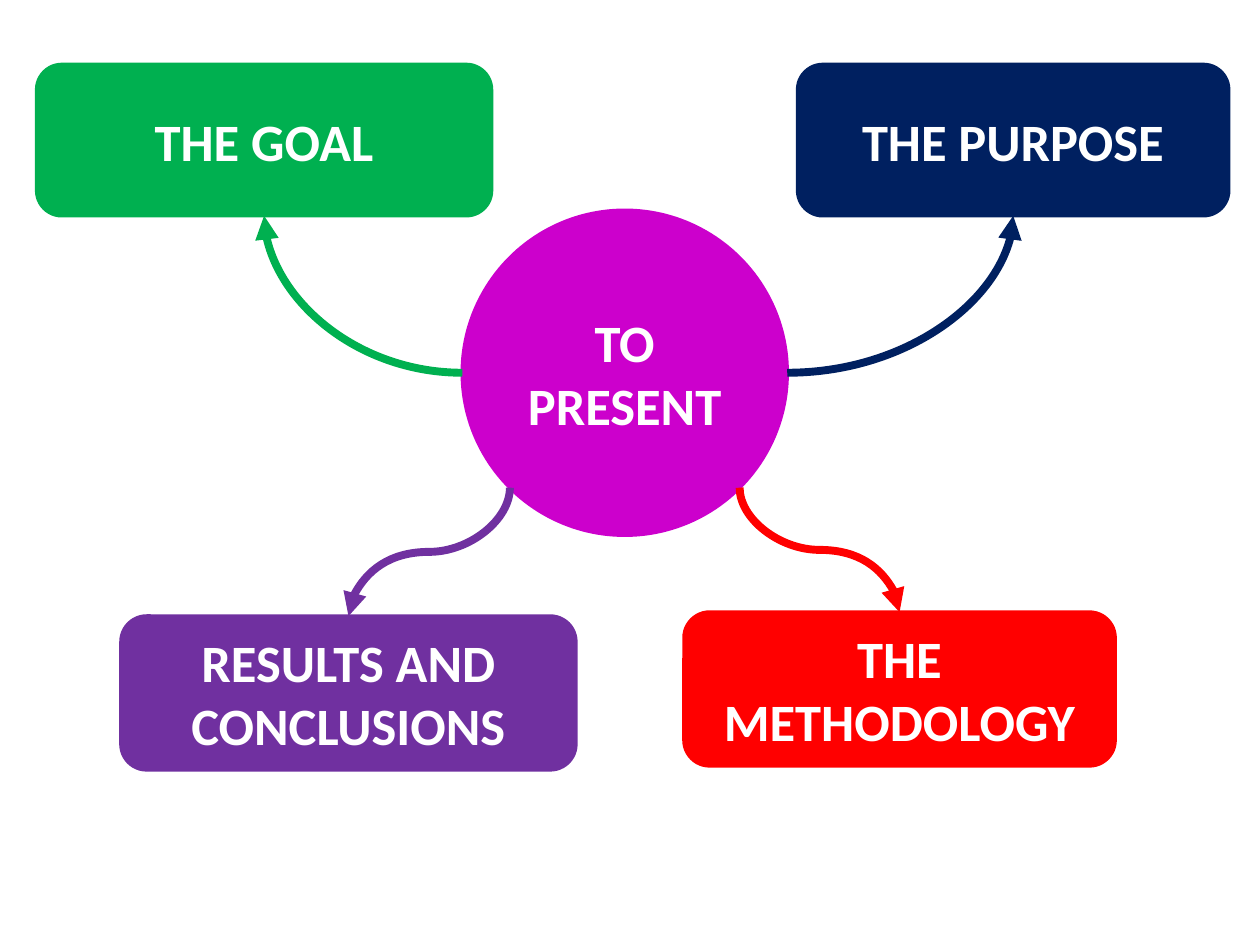
import math
from dataclasses import dataclass

from lxml import etree
from pptx import Presentation
from pptx import util as u
from pptx.dml.color import RGBColor
from pptx.enum import shapes, text
from pptx.oxml import ns


@dataclass(frozen=True)
class Node:
    """A labelled shape, measured in centimetres."""
    label: str
    left: float
    top: float
    width: float
    height: float
    color: str

    @property
    def center(self) -> tuple[float, float]:
        return self.left + self.width / 2, self.top + self.height / 2


HUB = Node("TO PRESENT", 9.32, 4.24, 6.55, 6.55, "CC00CC")
UPPER_TOPICS = [
    Node("THE GOAL", 0.74, 1.3, 9.17, 3.05, "00B050"),
    Node("THE PURPOSE", 16.08, 1.3, 8.69, 3.05, "002060"),
]
LOWER_TOPICS = [
    Node("RESULTS AND CONCLUSIONS", 2.44, 12.42, 9.17, 3.1, "7030A0"),
    Node("THE METHODOLOGY", 13.79, 12.34, 8.69, 3.1, "FF0000"),
]
LABEL_FONT = {"name": "Calibri", "size": u.Pt(30), "bold": True}


def rgb(color: str) -> RGBColor:
    return RGBColor.from_string(color)


def draw_node(page, node: Node, kind) -> None:
    box = page.shapes.add_shape(
        kind, *map(u.Cm, (node.left, node.top, node.width, node.height)))
    box.shadow.inherit = False
    box.fill.solid()
    box.fill.fore_color.rgb = rgb(node.color)
    box.line.color.rgb = rgb(node.color)
    box.line.width = u.Pt(2)
    frame = box.text_frame
    frame.word_wrap = True
    frame.vertical_anchor = text.MSO_ANCHOR.MIDDLE
    para = frame.paragraphs[0]
    para.alignment = text.PP_ALIGN.CENTER
    span = para.add_run()
    span.text = node.label
    for name, value in LABEL_FONT.items():
        setattr(span.font, name, value)
    span.font.color.rgb = rgb("FFFFFF")


def draw_curve(page, begin: tuple[float, float], end: tuple[float, float], color: str):
    """Draw a curved arrow that leaves its begin point horizontally."""
    curve = page.shapes.add_connector(
        shapes.MSO_CONNECTOR.CURVE, *map(u.Cm, (*begin, *end)))
    curve.line.color.rgb = rgb(color)
    curve.line.width = u.Pt(4.5)
    etree.SubElement(curve.line._get_or_add_ln(), ns.qn("a:tailEnd"), type="triangle")
    etree.SubElement(curve._element.spPr, ns.qn("a:effectLst"))
    return curve


def draw_upward_arrow(page, topic: Node, side: int) -> None:
    """Join a side of the hub to the bottom of a topic with a quarter bend."""
    x, y = HUB.center
    end = (topic.center[0], topic.top + topic.height)
    curve = draw_curve(page, (x + side * HUB.width / 2, y), end, topic.color)
    curve._element.spPr.find(ns.qn("a:prstGeom")).set("prst", "curvedConnector2")


def draw_downward_arrow(page, topic: Node, side: int) -> None:
    """Join a lower diagonal of the hub to the top of a topic with a turned S bend."""
    reach = HUB.width / 2 * math.sqrt(0.5)
    start_x, start_y = HUB.center[0] + side * reach, HUB.center[1] + reach
    end_x, end_y = topic.center[0], topic.top
    mid_x, mid_y = (start_x + end_x) / 2, (start_y + end_y) / 2
    half_drop = side * (end_y - start_y) / 2
    half_run = abs(end_x - start_x) / 2
    curve = draw_curve(page, (mid_x + half_drop, mid_y - half_run),
                       (mid_x - half_drop, mid_y + half_run), topic.color)
    curve._element.spPr.xfrm.set("rot", str((180 + side * 90) * 60000))


def main() -> None:
    deck = Presentation()
    deck.slide_width, deck.slide_height = u.Cm(25.4), u.Cm(19.05)
    page = deck.slides.add_slide(deck.slide_layouts[6])
    draw_node(page, HUB, shapes.MSO_SHAPE.OVAL)
    for topic in UPPER_TOPICS + LOWER_TOPICS:
        draw_node(page, topic, shapes.MSO_SHAPE.ROUNDED_RECTANGLE)
    for topics, draw_arrow in ((UPPER_TOPICS, draw_upward_arrow),
                               (LOWER_TOPICS, draw_downward_arrow)):
        for topic, side in zip(topics, (-1, 1)):
            draw_arrow(page, topic, side)
    deck.save("out.pptx")


if __name__ == "__main__":
    main()
